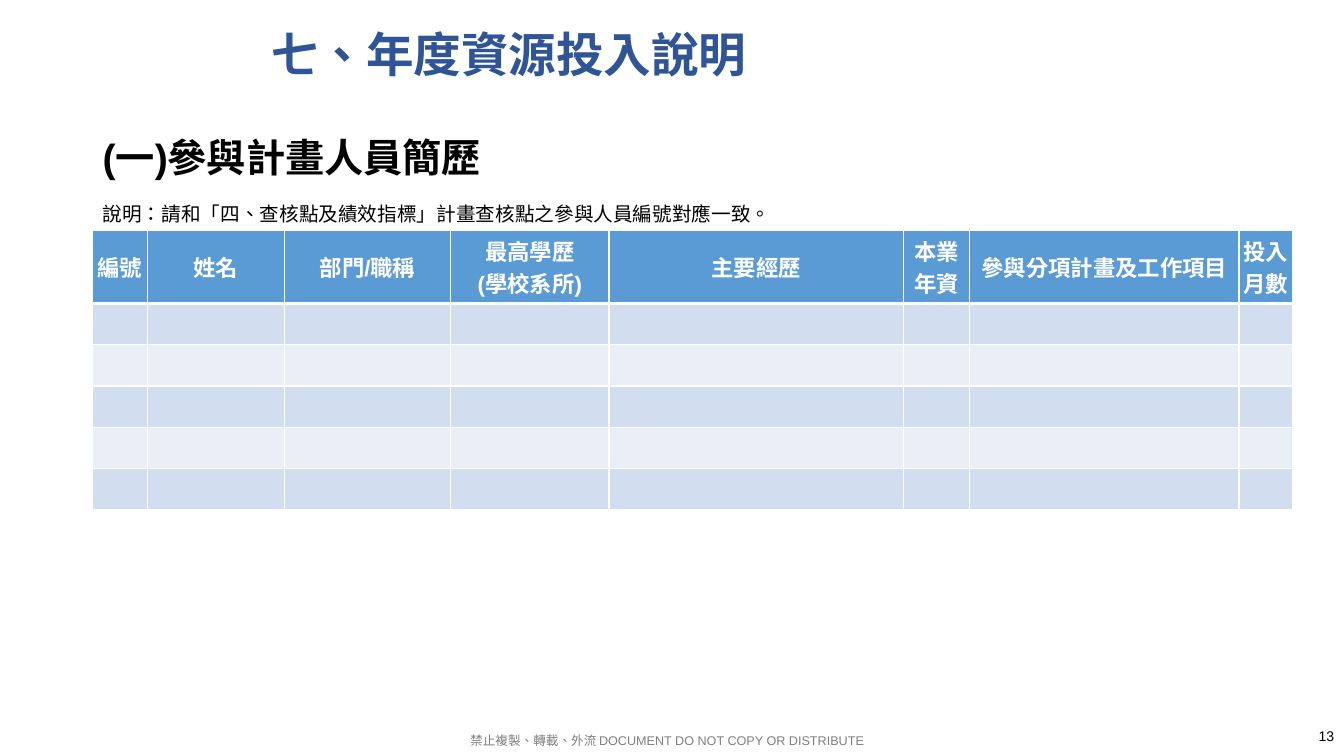
"""Builds the slide on yearly resources with the project staff table."""
from itertools import product

from lxml.etree import SubElement
from pptx import Presentation
from pptx.dml.color import RGBColor
from pptx.enum.lang import MSO_LANGUAGE_ID as Lang
from pptx.enum.text import MSO_ANCHOR as Anchor, PP_ALIGN as Align
from pptx.oxml.ns import qn
from pptx.util import Pt

PX = 9144
THEME = {
    "font": "Arial",
    "title": (34, "2F5597", True),
    "heading": (28, "000000", True),
    "note": (14, "000000", False),
    "header": (16, "FFFFFF", True),
    "footer": (9, "808080", False),
    "page": (10, "000000", False),
    "header_fill": "5B9BD5",
    "bands": ("EAEFF7", "D2DEEF"),
    "grid": "FFFFFF",
}


def write(paragraph, text, style, align=Align.LEFT):
    size, color, bold = THEME[style]
    paragraph.alignment = align
    run = paragraph.add_run()
    run.text = text
    run.font.name, run.font.size, run.font.bold = THEME["font"], Pt(size), bold
    run.font.color.rgb = RGBColor.from_string(color)
    run.font.language_id = Lang.TRADITIONAL_CHINESE


def add_border(cell, side, points):
    line = SubElement(cell._tc.get_or_add_tcPr(), qn(f"a:{side}"), w=str(Pt(points)))
    fill = SubElement(line, qn("a:solidFill"))
    SubElement(fill, qn("a:srgbClr"), val=THEME["grid"])


deck = Presentation()
deck.slide_width, deck.slide_height = 1333 * PX, 750 * PX
slide = deck.slides.add_slide(deck.slide_layouts[6])

texts = [
    ("禁止複製、轉載、外流 DOCUMENT DO NOT COPY OR DISTRIBUTE", "footer",
     (419, 722, 485, 25), Align.CENTER, Anchor.TOP, 1),
    ("七、年度資源投入說明", "title", (259, 1, 938, 112), Align.LEFT, Anchor.MIDDLE, 0.9),
    ("(一)參與計畫人員簡歷", "heading", (92, 133, 1150, 542), Align.LEFT, Anchor.TOP, 0.9),
    ("13", "page", (1033, 710, 300, 40), Align.RIGHT, Anchor.MIDDLE, 1),
    ("說明：請和「四、查核點及績效指標」計畫查核點之參與人員編號對應一致。", "note",
     (92, 195, 1231, 34), Align.LEFT, Anchor.TOP, 1),
]
for text, style, box, align, anchor, spacing in texts:
    frame = slide.shapes.add_textbox(*(n * PX for n in box)).text_frame
    frame.word_wrap, frame.vertical_anchor = True, anchor
    frame.paragraphs[0].line_spacing = spacing
    write(frame.paragraphs[0], text, style, align)

columns = [
    ("編號", 54), ("姓名", 136), ("部門/職稱", 165), ("最高學歷\n(學校系所)", 157),
    ("主要經歷", 292), ("本業年資", 66), ("參與分項計畫及工作項目", 267), ("投入月數", 53),
]
row_heights = [72] + [41] * 5
staff = slide.shapes.add_table(
    len(row_heights), len(columns), 92 * PX, 229 * PX,
    sum(width for _, width in columns) * PX, sum(row_heights) * PX).table
for row, height in zip(staff.rows, row_heights):
    row.height = height * PX
for column, (_, width) in zip(staff.columns, columns):
    column.width = width * PX

for r, c in product(range(len(row_heights)), range(len(columns))):
    cell = staff.cell(r, c)
    cell.vertical_anchor = Anchor.MIDDLE
    cell.margin_left = cell.margin_right = 2 * PX
    cell.margin_top = cell.margin_bottom = 0
    for side in ("lnL", "lnR", "lnT", "lnB"):
        header_edge = (r, side) in ((0, "lnB"), (1, "lnT"))
        add_border(cell, side, 3 if header_edge else 1)
    cell.fill.solid()
    color = THEME["bands"][r % 2] if r else THEME["header_fill"]
    cell.fill.fore_color.rgb = RGBColor.from_string(color)

for c, (label, _) in enumerate(columns):
    frame = staff.cell(0, c).text_frame
    for i, line in enumerate(label.split("\n")):
        paragraph = frame.add_paragraph() if i else frame.paragraphs[0]
        write(paragraph, line, "header", Align.CENTER)

deck.save("out.pptx")
